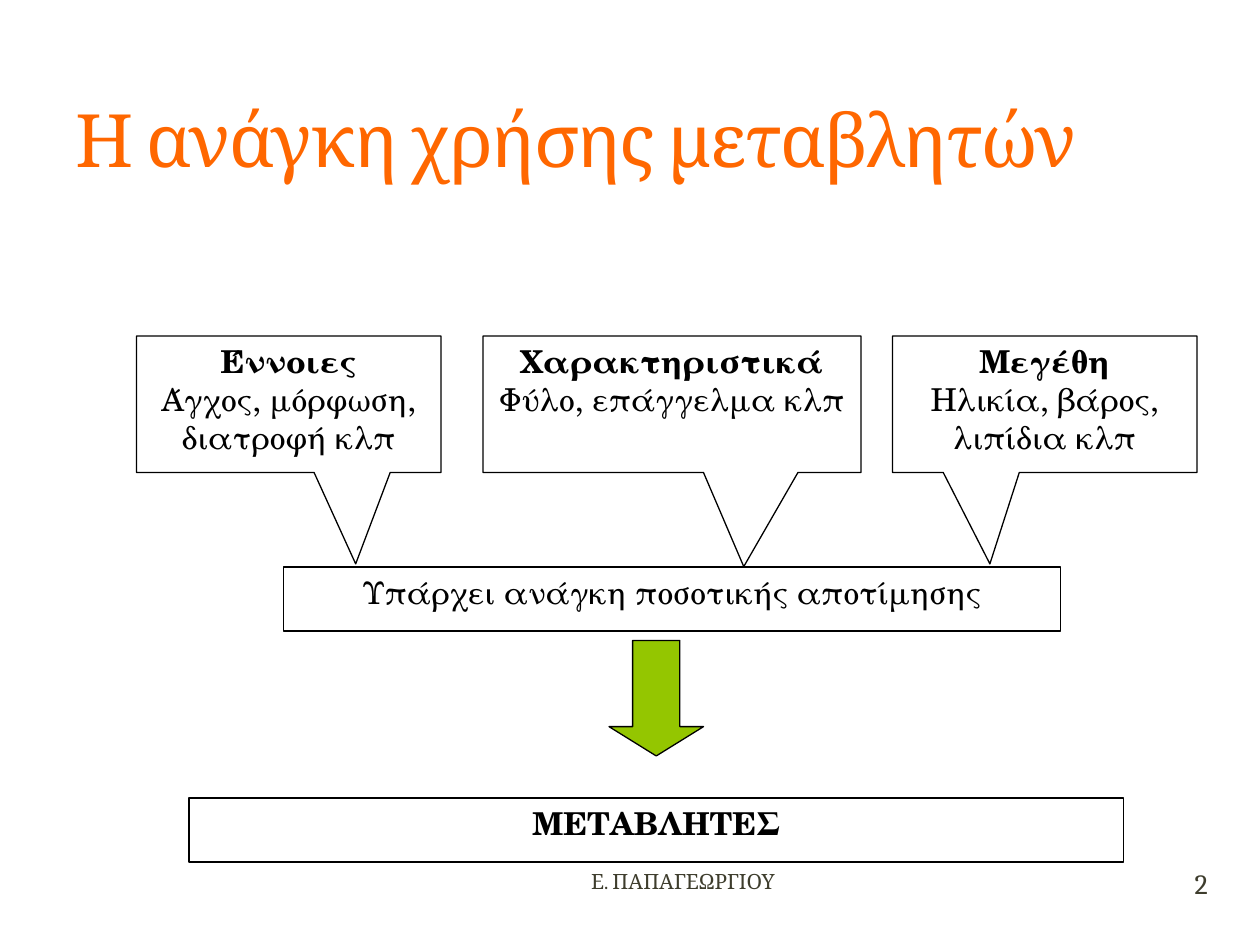
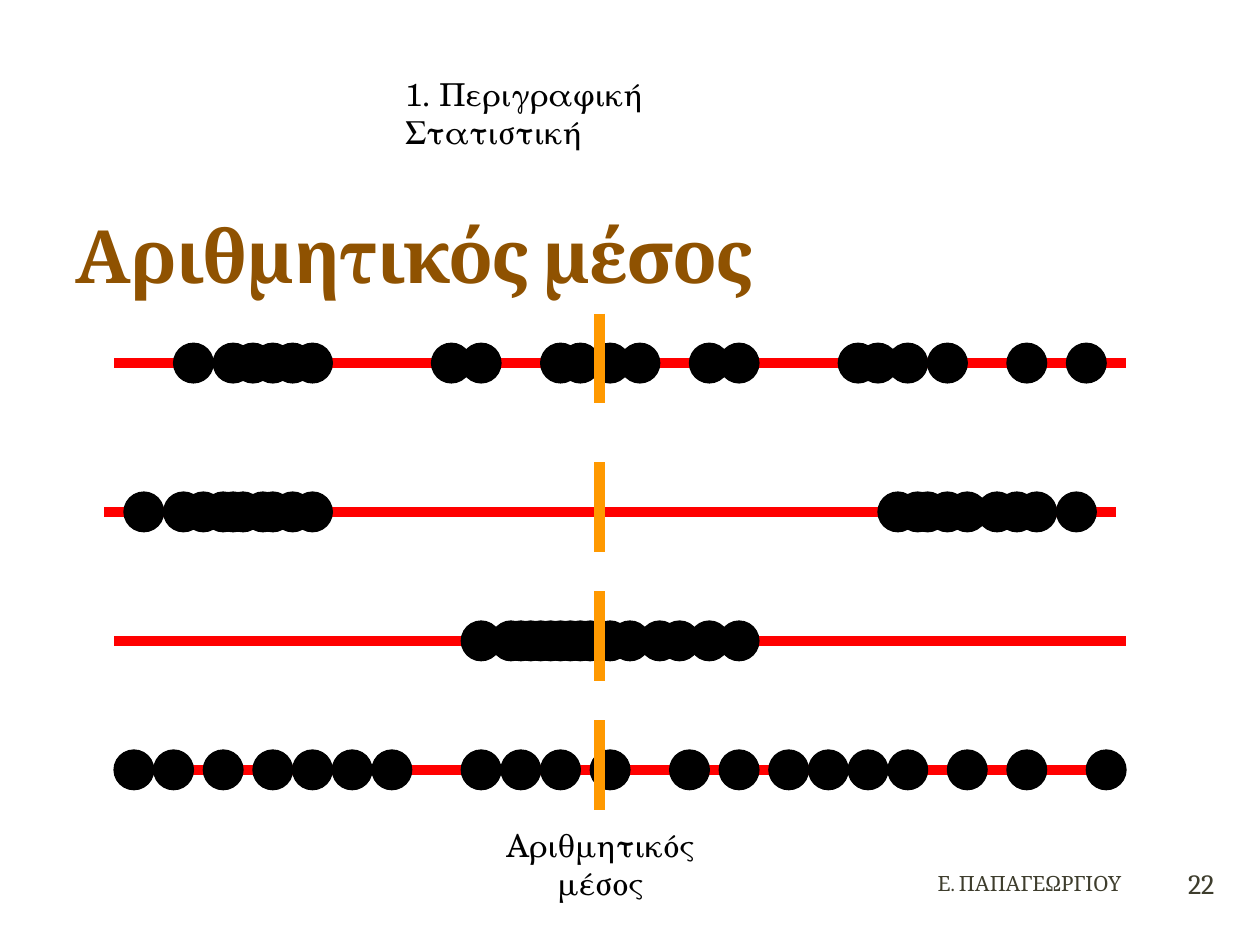
"""Builds two statistics slides: the need for variables, and the arithmetic mean."""
import dataclasses
import typing

import pptx
import pptx.dml.color
import pptx.enum.shapes
import pptx.enum.text
import pptx.oxml.ns
import pptx.oxml.xmlchemy
import pptx.util

Pt = pptx.util.Pt
Kind = pptx.enum.shapes.MSO_SHAPE
Align = pptx.enum.text.PP_ALIGN
Anchor = pptx.enum.text.MSO_ANCHOR

CELL = pptx.util.Inches(1) // 12
STEP = pptx.util.Mm(2)

BLACK, RED, AMBER, GREEN = "000000", "FF0000", "FF9900", "94C600"
ORANGE, BROWN, GREY = "FF6700", "8F5201", "3E3D2D"
HEAD, BODY = "Cambria", "TeX Gyre Schola"


class Box(typing.NamedTuple):
    left: float
    top: float
    width: float
    height: float

    def scale(self, unit: int) -> list[int]:
        return [round(side * unit) for side in self]


@dataclasses.dataclass(frozen=True)
class Style:
    size: int = 18
    face: str = BODY
    tint: str = BLACK
    bold: bool = False
    align: Align = Align.CENTER


@dataclasses.dataclass(frozen=True)
class Panel:
    box: Box
    lines: tuple[tuple[str, Style], ...] = ()
    kind: Kind = Kind.RECTANGLE
    fill: str | None = None
    adjust: tuple[float, ...] = ()


class Scale(typing.NamedTuple):
    row: float
    dots: tuple[int, ...]
    shift: int = 0


PLAIN = Style()
BOLD = Style(bold=True)
LEFT = Style(align=Align.LEFT)
FOOT = Style(12, HEAD, GREY, align=Align.RIGHT)
PAGE = Style(16, HEAD, GREY)


def callout(left: int, width: int, tip: tuple[float, float], name: str, text: str) -> Panel:
    lines = ((name, BOLD), (text, PLAIN))
    return Panel(Box(left, 32, width, 13), lines, Kind.RECTANGULAR_CALLOUT, adjust=tip)


PANELS = (
    callout(13, 29, (0.22, 1.17), "Έννοιες", "Άγχος, μόρφωση, διατροφή κλπ"),
    callout(46, 36, (0.19, 1.19), "Χαρακτηριστικά", "Φύλο, επάγγελμα κλπ"),
    callout(85, 29, (-0.18, 1.17), "Μεγέθη", "Ηλικία, βάρος, λιπίδια κλπ"),
    Panel(Box(27, 54, 74, 6.1), (("Υπάρχει ανάγκη ποσοτικής αποτίμησης", PLAIN),)),
    Panel(Box(58, 61, 9, 11), kind=Kind.DOWN_ARROW, fill=GREEN, adjust=(0.5, 0.31)),
    Panel(Box(18, 76, 89, 6.1), (("ΜΕΤΑΒΛΗΤΕΣ", BOLD),)),
)

SCALES = (
    Scale(36.6, (6, 10, 12, 14, 16, 18, 32, 35, 43, 45, 48, 51, 58, 61, 73, 75, 78, 82, 90, 96)),
    Scale(51.6, (1, 5, 7, 9, 10, 11, 13, 14, 16, 18, 77, 79, 80, 82, 84, 87, 89, 91, 95), -1),
    Scale(64.6, (35, 38, 39, 40, 41, 42, 43, 44, 45, 46, 48, 50, 53, 55, 58, 61)),
    Scale(77.6, (0, 4, 9, 14, 18, 22, 26, 35, 39, 43, 48, 56, 61, 66, 70, 74, 78, 84, 90, 98)),
)
START, SPAN, MEAN, DOT = 11.5, 102, 60.45, 4


def color(code: str) -> pptx.dml.color.RGBColor:
    return pptx.dml.color.RGBColor.from_string(code)


def write(frame, lines, anchor: Anchor = Anchor.TOP) -> None:
    frame.word_wrap = True
    frame.auto_size = pptx.enum.text.MSO_AUTO_SIZE.NONE
    frame.vertical_anchor = anchor
    for index, (text, style) in enumerate(lines):
        para = frame.add_paragraph() if index else frame.paragraphs[0]
        para.text, para.alignment = text, style.align
        font = para.font
        font.size, font.name, font.bold = Pt(style.size), style.face, style.bold
        font.color.rgb = color(style.tint)


def label(slide, box: Box, text: str, style: Style, anchor: Anchor = Anchor.TOP):
    frame = slide.shapes.add_textbox(*box.scale(CELL)).text_frame
    write(frame, [(text, style)], anchor)
    return frame


def draw(slide, panel: Panel, unit: int = CELL) -> None:
    shape = slide.shapes.add_shape(panel.kind, *panel.box.scale(unit))
    shape.shadow.inherit = False
    for index, value in enumerate(panel.adjust):
        shape.adjustments[index] = value
    if panel.fill:
        shape.fill.solid()
        shape.fill.fore_color.rgb = color(panel.fill)
    else:
        shape.fill.background()
    shape.line.color.rgb = color(BLACK)
    shape.line.width = Pt(0.75)
    if panel.lines:
        write(shape.text_frame, panel.lines)


def rule(slide, tint: str, *ends: float) -> None:
    straight = pptx.enum.shapes.MSO_CONNECTOR.STRAIGHT
    line = slide.shapes.add_connector(straight, *(round(end * STEP) for end in ends))
    line.line.color.rgb = color(tint)
    line.line.width = Pt(6)
    line._element.spPr.append(pptx.oxml.xmlchemy.OxmlElement("a:effectLst"))


def start(deck, title: str, box: Box, style: Style, foot: Box, page: int):
    slide = deck.slides.add_slide(deck.slide_layouts[5])
    head = slide.shapes.title
    head.left, head.top, head.width, head.height = box.scale(CELL)
    write(head.text_frame, [(title, style)], Anchor.BOTTOM)
    props = head.text_frame.paragraphs[0]._p.pPr
    props.find(pptx.oxml.ns.qn("a:defRPr")).set("spc", "-100")
    label(slide, foot, "Ε. ΠΑΠΑΓΕΩΡΓΙΟΥ", FOOT, Anchor.MIDDLE)
    frame = label(slide, Box(110.4, 81.1, 8, 6), str(page), PAGE, Anchor.MIDDLE)
    frame.margin_left = frame.margin_right = frame.margin_top = frame.margin_bottom = 0
    return slide


def needs(deck) -> None:
    style = Style(42, HEAD, ORANGE, align=Align.LEFT)
    slide = start(deck, "Η ανάγκη χρήσης μεταβλητών", Box(6, 2, 108, 16), style,
                  Box(28, 81.4, 47, 5), 2)
    for panel in PANELS:
        draw(slide, panel)


def means(deck) -> None:
    style = Style(42, HEAD, BROWN, True, Align.LEFT)
    slide = start(deck, "Αριθμητικός μέσος", Box(6, 15, 108, 14), style,
                  Box(61, 81.6, 47, 5), 22)
    for row, dots, shift in SCALES:
        left = START + shift
        rule(slide, RED, left, row, left + SPAN, row)
        for dot in dots:
            box = Box(START + dot, row - DOT / 2, DOT, DOT)
            draw(slide, Panel(box, kind=Kind.OVAL, fill=BLACK), STEP)
        rule(slide, AMBER, MEAN, row - 5, MEAN, row + 4)
    label(slide, Box(44.9, 78.1, 24.6, 8.4), "Αριθμητικός μέσος", PLAIN)
    label(slide, Box(37.4, 6.6, 40, 4.8), "1. Περιγραφική Στατιστική", LEFT)


def main() -> None:
    deck = pptx.Presentation()
    deck.slide_width, deck.slide_height = 120 * CELL, 90 * CELL
    needs(deck)
    means(deck)
    deck.save("out.pptx")


if __name__ == "__main__":
    main()
